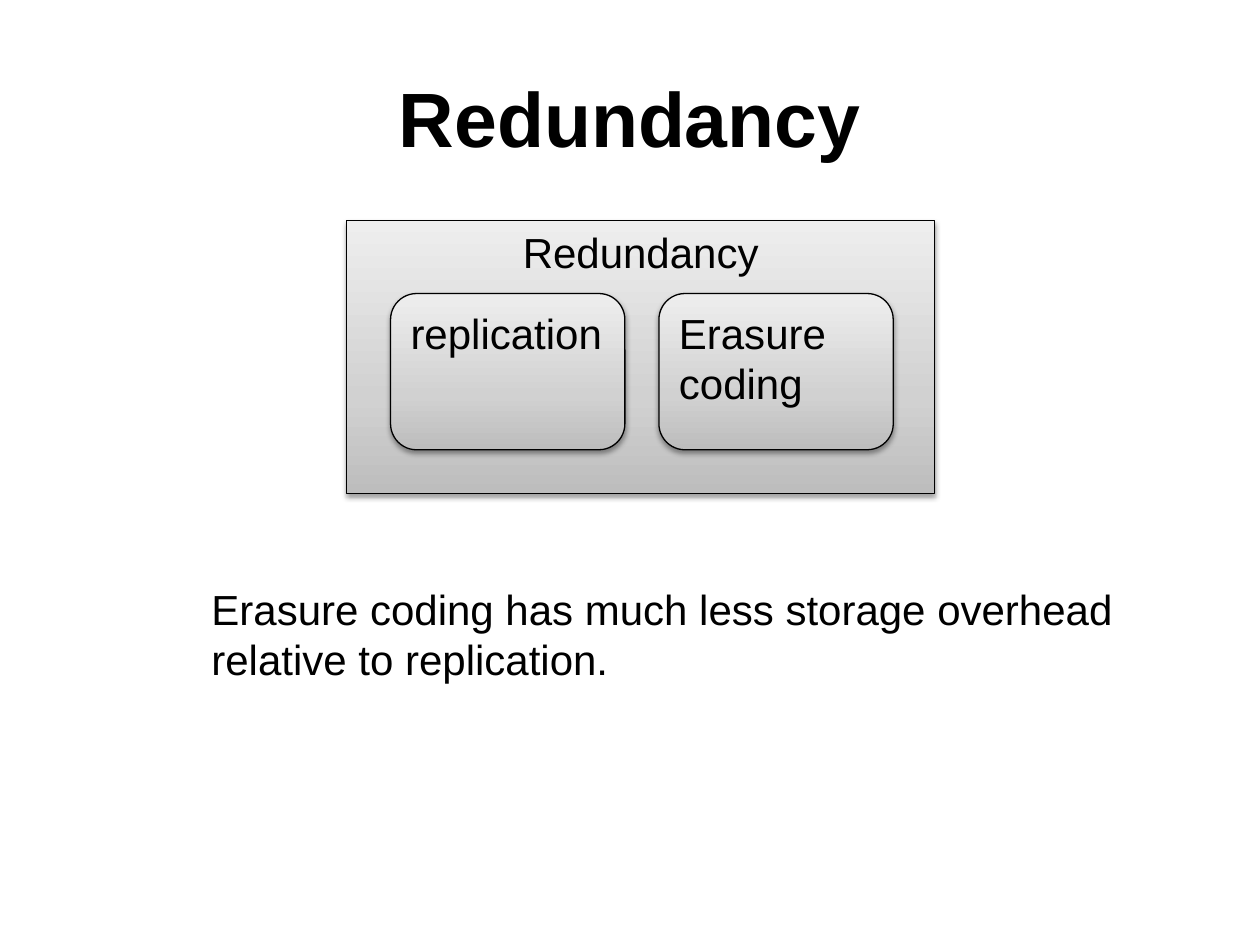
import copy

import lxml.etree
import pptx
import pptx.dml.color
import pptx.enum.shapes
import pptx.enum.text
import pptx.oxml
import pptx.oxml.ns
import pptx.util

Inches = pptx.util.Inches
Pt = pptx.util.Pt
Shape = pptx.enum.shapes.MSO_SHAPE
Align = pptx.enum.text.PP_ALIGN
Anchor = pptx.enum.text.MSO_ANCHOR
qn = pptx.oxml.ns.qn

GRADIENT = [(0, "BDBDBD"), (0.35, "D1D1D1"), (1, "EEEEEE")]
SHADOW = (
    f'<a:outerShdw {pptx.oxml.ns.nsdecls("a")} blurRad="40000" dist="20000" '
    'dir="5400000" rotWithShape="0"><a:srgbClr val="000000">'
    '<a:alpha val="38000"/></a:srgbClr></a:outerShdw>'
)


def rgb(value):
    return pptx.dml.color.RGBColor.from_string(value)


def write(frame, text, size, align, bold=False):
    frame.word_wrap = True
    para = frame.paragraphs[0]
    para.text = text
    para.alignment = align
    para.font.name = "Arial"
    para.font.size = Pt(size)
    para.font.bold = bold
    para.font.color.rgb = rgb("000000")


deck = pptx.Presentation()
deck.slide_width = Inches(10)
deck.slide_height = Inches(7.5)
page = deck.slides.add_slide(deck.slide_layouts[5])

# Title
title = page.shapes.title
title.left, title.top = Inches(0.5), Inches(0.3)
title.width, title.height = Inches(9), Inches(1.25)
title.text_frame.vertical_anchor = Anchor.MIDDLE
write(title.text_frame, "Redundancy", 44, Align.CENTER, bold=True)

# Outer panel and the two techniques inside it
boxes = [
    (Shape.RECTANGLE, 2.75, 1.75, 4.67, 2.17, "Redundancy", Align.CENTER),
    (Shape.ROUNDED_RECTANGLE, 3.1, 2.33, 1.86, 1.24, "replication", Align.LEFT),
    (Shape.ROUNDED_RECTANGLE, 5.23, 2.33, 1.86, 1.24, "Erasure coding", Align.LEFT),
]
for kind, left, top, width, height, label, align in boxes:
    box = page.shapes.add_shape(
        kind, Inches(left), Inches(top), Inches(width), Inches(height)
    )
    box.line.color.rgb = rgb("000000")
    box.line.width = Pt(0.75)

    # Three-stop gradient, dark at the bottom
    box.fill.gradient()
    box.fill.gradient_angle = 90
    stop_list = box.element.spPr.find(".//" + qn("a:gsLst"))
    stop_list.append(copy.deepcopy(stop_list[0]))
    for stop, (position, color) in zip(box.fill.gradient_stops, GRADIENT):
        stop.position = position
        stop.color.rgb = rgb(color)

    # Soft shadow below
    box.shadow.inherit = False
    effects = box.element.spPr.find(qn("a:effectLst"))
    effects.append(lxml.etree.fromstring(SHADOW))

    box.text_frame.vertical_anchor = Anchor.TOP
    write(box.text_frame, label, 24, align)

# Takeaway
takeaway = page.shapes.add_textbox(Inches(1.58), Inches(4.58), Inches(7.67), Inches(0.91))
takeaway.text_frame.auto_size = pptx.enum.text.MSO_AUTO_SIZE.SHAPE_TO_FIT_TEXT
write(
    takeaway.text_frame,
    "Erasure coding has much less storage overhead relative to replication.",
    24,
    Align.LEFT,
)

deck.save("out.pptx")
